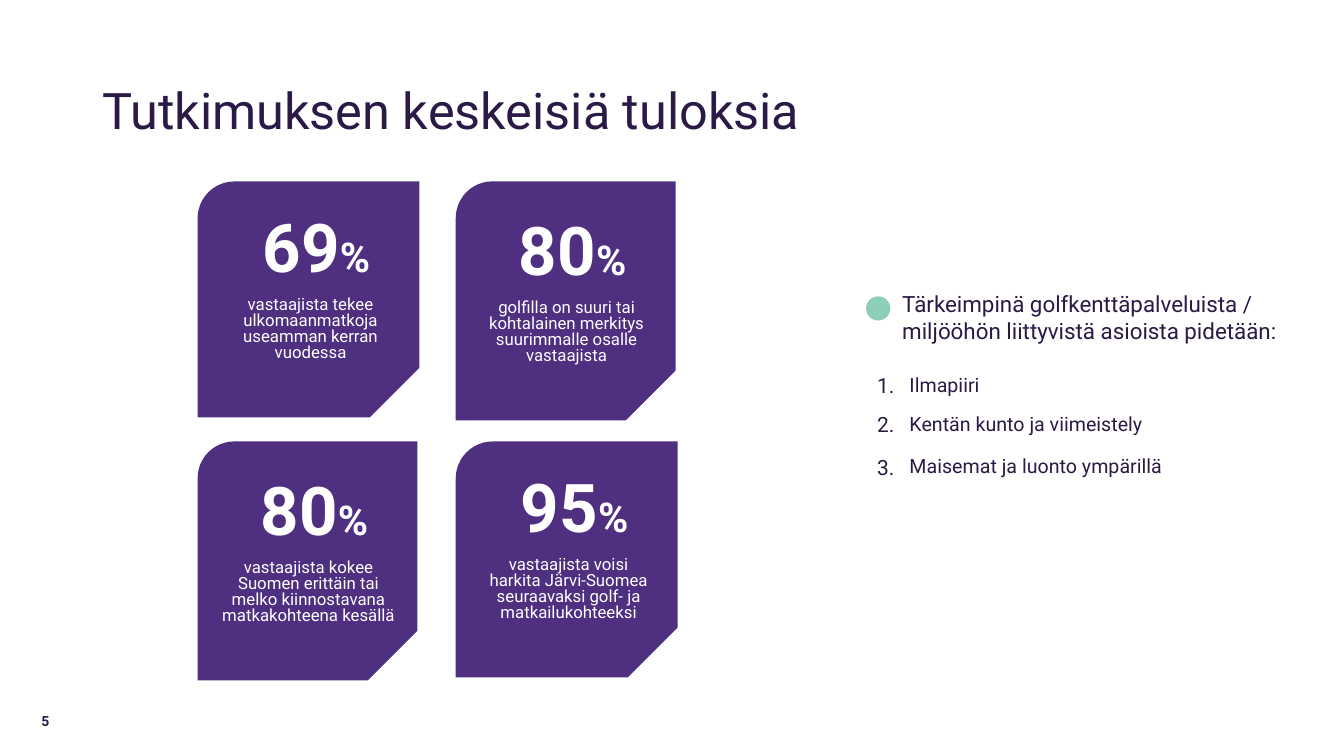
from pptx import Presentation
from pptx.dml.color import RGBColor
from pptx.enum.shapes import MSO_SHAPE
from pptx.enum.text import MSO_ANCHOR, PP_ALIGN
from pptx.util import Inches, Pt

LEFT, CENTER, RIGHT = PP_ALIGN.LEFT, PP_ALIGN.CENTER, PP_ALIGN.RIGHT
TOP, MIDDLE = MSO_ANCHOR.TOP, MSO_ANCHOR.MIDDLE
CARD, CORNER, DOT = MSO_SHAPE.ROUND_2_DIAG_RECTANGLE, MSO_SHAPE.RIGHT_TRIANGLE, MSO_SHAPE.OVAL

FONT = "Roboto"
INK, PURPLE, MINT, WHITE = "2C1A46", "4F2F80", "8DCFB6", "FFFFFF"

# Card grid: shared left edges and tops, with two slightly different card sizes
COLUMNS, ROWS = (1.96, 4.52), (1.8, 4.38)
WIDE, TALL = (2.2, 2.34), (2.18, 2.37)
CUT = 0.56
RESULTS = [
    (0, 0, WIDE, "69", "vastaajista tekee ulkomaanmatkoja useamman kerran vuodessa"),
    (1, 0, TALL, "80", "golfilla on suuri tai kohtalainen merkitys suurimmalle osalle vastaajista"),
    (0, 1, TALL, "80", "vastaajista kokee Suomen erittäin tai melko kiinnostavana matkakohteena kesällä"),
    (1, 1, WIDE, "95", "vastaajista voisi harkita Järvi-Suomea seuraavaksi golf- ja matkailukohteeksi"),
]
SERVICES = ["Ilmapiiri", "Kentän kunto ja viimeistely", "Maisemat ja luonto ympärillä"]


def colour(code):
    return RGBColor.from_string(code)


def write(frame, runs, tint=INK, align=LEFT, spacing=None, bold=False):
    """Fill the first paragraph with (text, size) runs."""
    frame.word_wrap = True
    para = frame.paragraphs[0]
    para.alignment = align
    if spacing:
        para.line_spacing = spacing
    for text, size in runs:
        run = para.add_run()
        run.text = text
        run.font.name, run.font.size, run.font.bold = FONT, Pt(size), bold
        run.font.color.rgb = colour(tint)


def add_text(page, box, runs, anchor=TOP, **style):
    frame = page.shapes.add_textbox(*map(Inches, box)).text_frame
    frame.vertical_anchor = anchor
    write(frame, runs, **style)


def add_block(page, kind, box, fill):
    block = page.shapes.add_shape(kind, *map(Inches, box))
    block.shadow.inherit = False
    block.fill.solid()
    block.fill.fore_color.rgb = colour(fill)
    block.line.fill.background()
    return block


def result_card(page, box, figure, caption):
    """Card with a cut corner; its parts hang from the bottom right corner."""
    left, top, width, height = box
    right, bottom = left + width, top + height
    add_block(page, CARD, box, PURPLE)
    corner = add_block(page, CORNER, (right - 0.52, bottom - 0.53, CUT, CUT), WHITE)
    corner.rotation = 270
    add_text(page, (right - 1.87, bottom - 2, 1.7, 0.76), [(figure, 48), ("%", 29.3)],
             tint=WHITE, align=CENTER, spacing=0.8, bold=True)
    add_text(page, (right - 2.04, bottom - 1.24, 1.92, 0.75), [(caption, 12)],
             tint=WHITE, align=CENTER, spacing=0.8)


def service_list(page, box):
    """Heading with a dot, and the numbered services in a table below it."""
    left, top, width, height = box
    add_block(page, DOT, (left, top + 0.11, 0.24, 0.24), MINT)
    add_text(page, (left + 0.26, top, 4.12, 0.64),
             [("Tärkeimpinä golfkenttäpalveluista / miljööhön liittyvistä asioista pidetään:", 16)])

    area = (left, top + 0.81, width, height - 0.81)
    table = page.shapes.add_table(len(SERVICES), 2, *map(Inches, area)).table
    table.first_row = table.horz_banding = False
    for column, size in zip(table.columns, (0.33, width - 0.33)):
        column.width = Inches(size)
    for row, size in zip(table.rows, (0.39, 0.42, 0.87)):
        row.height = Inches(size)
    for index, service in enumerate(SERVICES):
        entries = [(f"{index + 1}.", 15, RIGHT, 0.05), (service, 14, LEFT, 0.1)]
        for side, (text, size, align, inset) in enumerate(entries):
            cell = table.cell(index, side)
            cell.fill.background()
            cell.margin_left, cell.margin_right = Inches(inset), Inches(0.05)
            cell.margin_top = cell.margin_bottom = Inches(0.07)
            write(cell.text_frame, [(text, size)], align=align)


def main():
    deck = Presentation()
    deck.slide_width, deck.slide_height = Inches(13.33), Inches(7.5)
    page = deck.slides.add_slide(deck.slide_layouts[6])

    # Title and page number
    add_text(page, (0.92, 0.4, 11.5, 1.45), [("Tutkimuksen keskeisiä tuloksia", 36)],
             anchor=MIDDLE, spacing=0.9)
    add_text(page, (0.15, 6.95, 0.6, 0.4), [("5", 10)], anchor=MIDDLE, align=CENTER, bold=True)

    # Result cards
    for column, row, size, figure, caption in RESULTS:
        result_card(page, (COLUMNS[column], ROWS[row], *size), figure, caption)

    # Key services
    service_list(page, (8.59, 2.83, 3.92, 2.49))
    deck.save("out.pptx")


if __name__ == "__main__":
    main()
